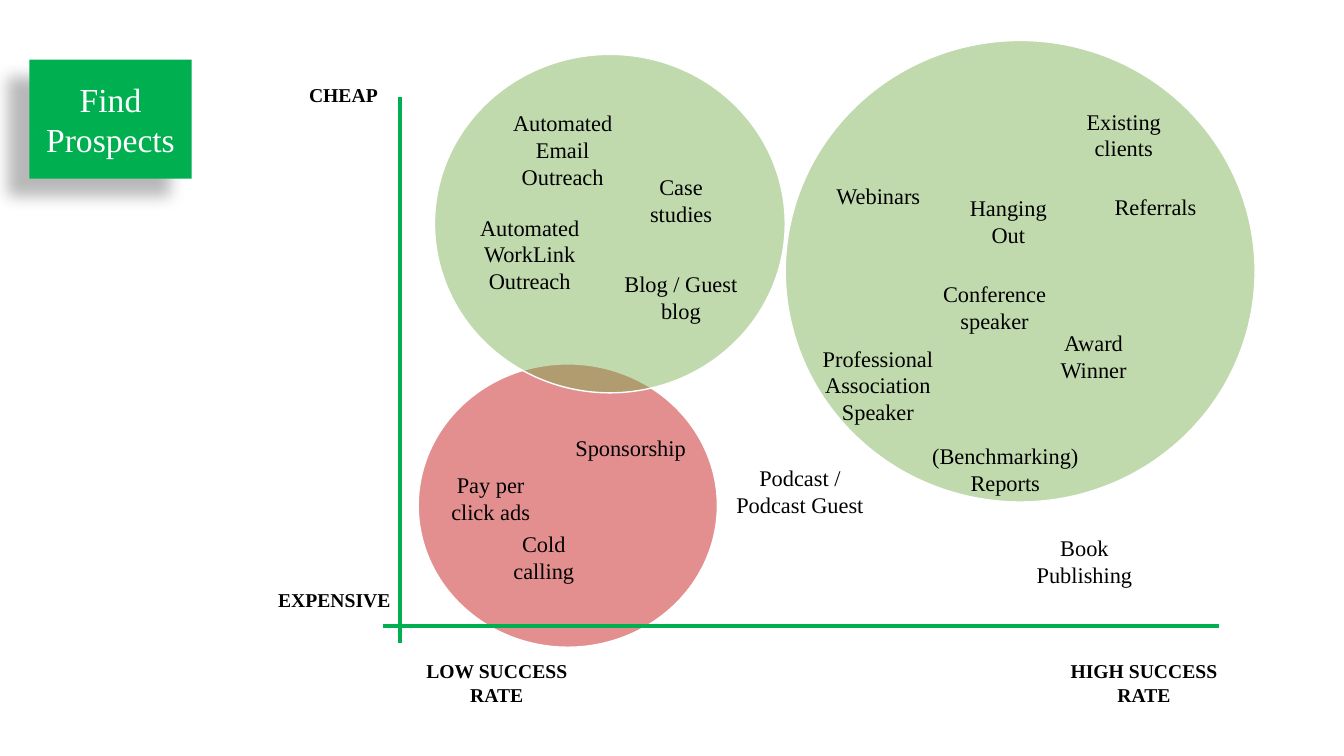
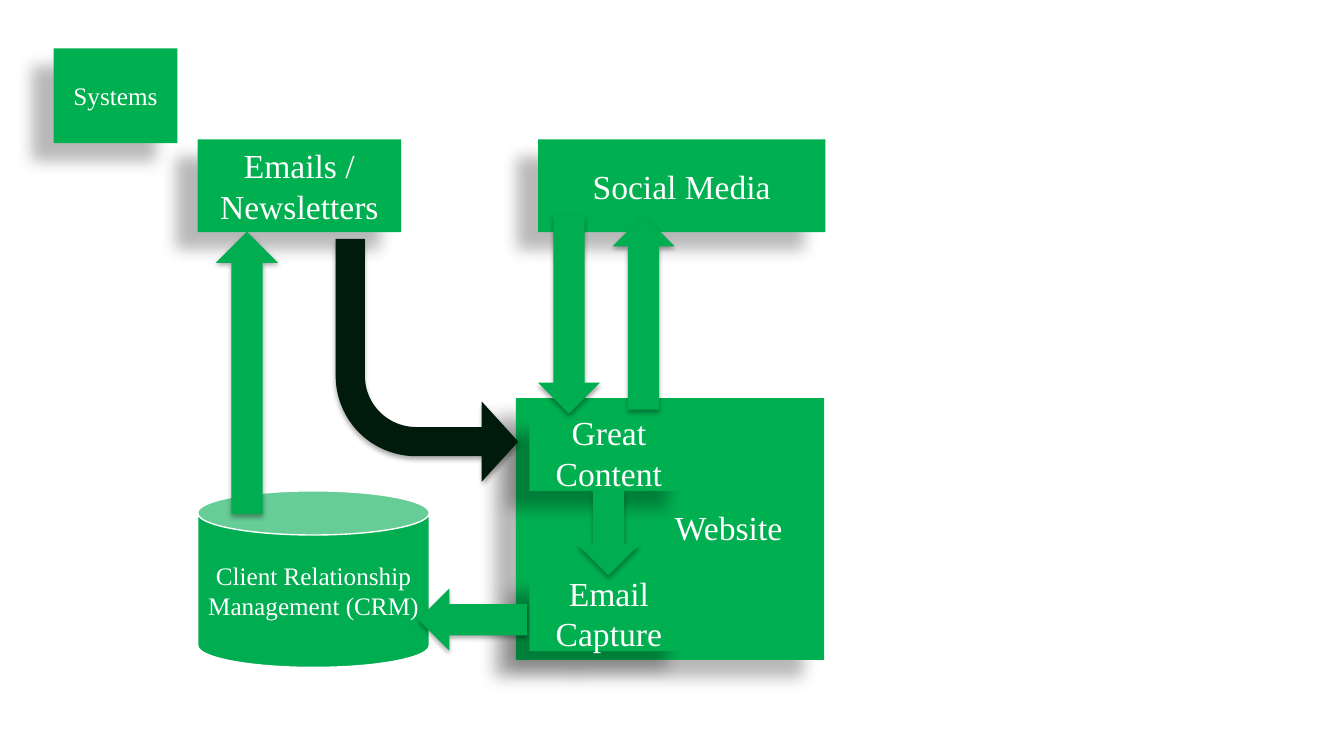
"""Build two slides: a prospecting map and a marketing systems diagram."""
import pptx
import pptx.dml.color
import pptx.enum.shapes
import pptx.enum.text
import pptx.oxml.ns
import pptx.util
from lxml import etree

Cm = pptx.util.Cm
Pt = pptx.util.Pt
RGBColor = pptx.dml.color.RGBColor
MSO_SHAPE = pptx.enum.shapes.MSO_SHAPE
PP_ALIGN = pptx.enum.text.PP_ALIGN
MSO_ANCHOR = pptx.enum.text.MSO_ANCHOR
qn = pptx.oxml.ns.qn

FONT = "Times New Roman"
WHITE = RGBColor(0xFF, 0xFF, 0xFF)
BLACK = RGBColor(0x00, 0x00, 0x00)
BOX_GREEN = RGBColor(0x00, 0xAF, 0x50)
ARROW_GREEN = RGBColor(0x00, 0xAD, 0x50)
AXIS_GREEN = RGBColor(0x00, 0xB0, 0x50)
DARK_GREEN = RGBColor(0x00, 0x1B, 0x0C)
CIRCLE_GREEN = RGBColor(0x70, 0xAD, 0x47)
CIRCLE_RED = RGBColor(0xC0, 0x00, 0x00)

BOX_SHADOW = (28, 11.8, 19.7, 141)
ARROW_SHADOW = (32, 3.5, 2.2, 90)


def write(shape, text, size, color, bold=False, alignment=PP_ALIGN.CENTER, anchor=MSO_ANCHOR.MIDDLE):
    frame = shape.text_frame
    frame.word_wrap = True
    frame.auto_size = pptx.enum.text.MSO_AUTO_SIZE.NONE
    frame.vertical_anchor = anchor
    paragraph = frame.paragraphs[0]
    paragraph.alignment = alignment
    run = paragraph.add_run()
    run.text = text
    run.font.name = FONT
    run.font.size = Pt(size)
    run.font.bold = bold
    run.font.color.rgb = color


def paint(shape, color, shadow=None):
    shape.fill.solid()
    shape.fill.fore_color.rgb = color
    shape.line.fill.background()
    shape.shadow.inherit = False
    if shadow:
        alpha, blur, distance, angle = shadow
        effects = shape.element.spPr.find(qn("a:effectLst"))
        outer = etree.SubElement(
            effects, qn("a:outerShdw"), blurRad=str(Pt(blur)), dist=str(Pt(distance)),
            dir=str(angle * 60000), rotWithShape="0")
        shade = etree.SubElement(outer, qn("a:srgbClr"), val="000000")
        etree.SubElement(shade, qn("a:alpha"), val=str(alpha * 1000))


presentation = pptx.Presentation()
presentation.slide_width = Cm(33.87)
presentation.slide_height = Cm(19.05)

titles = [
    ("Find Prospects", 24, 0.74, 1.5, 4.09, 3),
    ("Systems", 18, 1.35, 1.22, 3.12, 2.39),
]
slides = []
for text, size, left, top, width, height in titles:
    slide = presentation.slides.add_slide(presentation.slide_layouts[5])
    title = slide.shapes.title
    title.left, title.top = Cm(left), Cm(top)
    title.width, title.height = Cm(width), Cm(height)
    paint(title, BOX_GREEN, BOX_SHADOW)
    write(title, text, size, WHITE)
    slides.append(slide)
prospects, systems = slides

circles = [
    (CIRCLE_RED, 10.54, 9.17, 7.54, 7.14),
    (CIRCLE_GREEN, 10.95, 1.37, 8.84, 8.53),
    (CIRCLE_GREEN, 19.79, 1.02, 11.84, 11.63),
]
for color, left, top, width, height in circles:
    circle = prospects.shapes.add_shape(MSO_SHAPE.OVAL, Cm(left), Cm(top), Cm(width), Cm(height))
    paint(circle, color)
    circle.line.color.rgb = WHITE
    circle.line.width = Pt(1)
    fill_color = circle.element.spPr.find(qn("a:solidFill"))[0]
    etree.SubElement(fill_color, qn("a:alpha"), val="44000")

for ends in [(9.65, 15.77, 30.71, 15.77), (10.08, 16.21, 10.08, 2.44)]:
    axis = prospects.shapes.add_connector(
        pptx.enum.shapes.MSO_CONNECTOR.STRAIGHT, *[Cm(value) for value in ends])
    axis.line.color.rgb = AXIS_GREEN
    axis.line.width = Pt(2.5)
    etree.SubElement(axis.element.spPr, qn("a:effectLst"))

axis_labels = [
    ("CHEAP", 7.54, 1.96, 3.18, 1),
    ("EXPENSIVE", 6.76, 14.68, 3.71, 1),
    ("LOW SUCCESS RATE", 10.26, 16.48, 4.52, 2),
    ("HIGH SUCCESS RATE", 26.57, 16.48, 4.52, 2),
]
channels = [
    ("Automated Email Outreach", 12.4, 2.62, 3.56, 3),
    ("Automated WorkLink Outreach", 11.61, 5.26, 3.48, 3),
    ("Case studies", 15.77, 4.24, 2.79, 2),
    ("Blog / Guest blog", 15.24, 6.68, 3.84, 2),
    ("Existing clients", 26.82, 2.59, 3, 2),
    ("Webinars", 20.83, 4.47, 2.92, 1),
    ("Hanging Out", 23.72, 4.78, 3.38, 2),
    ("Referrals", 27.84, 4.75, 3, 1),
    ("Conference speaker", 23.06, 6.93, 4.01, 2),
    ("Award Winner", 26.06, 8.18, 3, 2),
    ("Professional Association Speaker", 20.12, 8.56, 4.01, 3),
    ("(Benchmarking) Reports", 23.11, 11.02, 4.45, 2),
    ("Sponsorship", 14.25, 10.82, 3.61, 1),
    ("Pay per click ads", 10.97, 11.76, 2.79, 2),
    ("Cold calling", 12.37, 13.23, 2.67, 2),
    ("Podcast / Podcast Guest", 18.19, 11.58, 3.94, 2),
    ("Book Publishing", 25.83, 13.34, 3, 2),
]
for labels, size, bold in [(axis_labels, 14, True), (channels, 16, False)]:
    for text, left, top, width, lines in labels:
        height = 0.25 + lines * size * 0.0425
        label = prospects.shapes.add_textbox(Cm(left), Cm(top), Cm(width), Cm(height))
        alignment = PP_ALIGN.LEFT if lines == 1 else PP_ALIGN.CENTER
        write(label, text, size, BLACK, bold, alignment, MSO_ANCHOR.TOP)

website = systems.shapes.add_shape(MSO_SHAPE.RECTANGLE, Cm(13), Cm(10.03), Cm(7.77), Cm(6.6))
paint(website, BOX_GREEN, BOX_SHADOW)

database = systems.shapes.add_shape(MSO_SHAPE.CAN, Cm(4.98), Cm(12.37), Cm(5.84), Cm(4.45))
paint(database, ARROW_GREEN)
database.line.color.rgb = WHITE
database.line.width = Pt(1)
write(database, "Client Relationship Management (CRM)", 18, WHITE)

boxes = [
    ("Great Content", 13.34, 10.44, 4.01, 1.93),
    ("Email Capture", 13.34, 14.48, 4.01, 1.93),
    ("Social Media", 13.56, 3.51, 7.24, 2.34),
    ("Emails / Newsletters", 4.98, 3.51, 5.13, 2.34),
]
for text, left, top, width, height in boxes:
    box = systems.shapes.add_shape(MSO_SHAPE.RECTANGLE, Cm(left), Cm(top), Cm(width), Cm(height))
    paint(box, BOX_GREEN, BOX_SHADOW)
    write(box, text, 24, WHITE)

arrows = [
    (13.77, 7.09, 4.9, 270),
    (14.27, 12.65, 2.13, 90),
    (10.54, 14.83, 2.74, 180),
    (2.67, 8.61, 7.11, 270),
    (11.84, 7.14, 5, 90),
]
for left, top, length, rotation in arrows:
    arrow = systems.shapes.add_shape(MSO_SHAPE.RIGHT_ARROW, Cm(left), Cm(top), Cm(length), Cm(1.57))
    arrow.rotation = rotation
    paint(arrow, ARROW_GREEN, ARROW_SHADOW)

website_label = systems.shapes.add_textbox(Cm(16.76), Cm(12.65), Cm(4.39), Cm(1.27))
write(website_label, "Website", 24, WHITE, alignment=PP_ALIGN.LEFT, anchor=MSO_ANCHOR.TOP)

bent_arrow = systems.shapes.add_shape(MSO_SHAPE.BENT_ARROW, Cm(8.46), Cm(6.02), Cm(4.6), Cm(6.12))
for index, value in enumerate([0.16, 0.22, 0.2, 0.44]):
    bent_arrow.adjustments[index] = value
bent_arrow.rotation = 180
bent_arrow.element.spPr.find(qn("a:xfrm")).set("flipH", "1")
paint(bent_arrow, DARK_GREEN, ARROW_SHADOW)

presentation.save("out.pptx")
